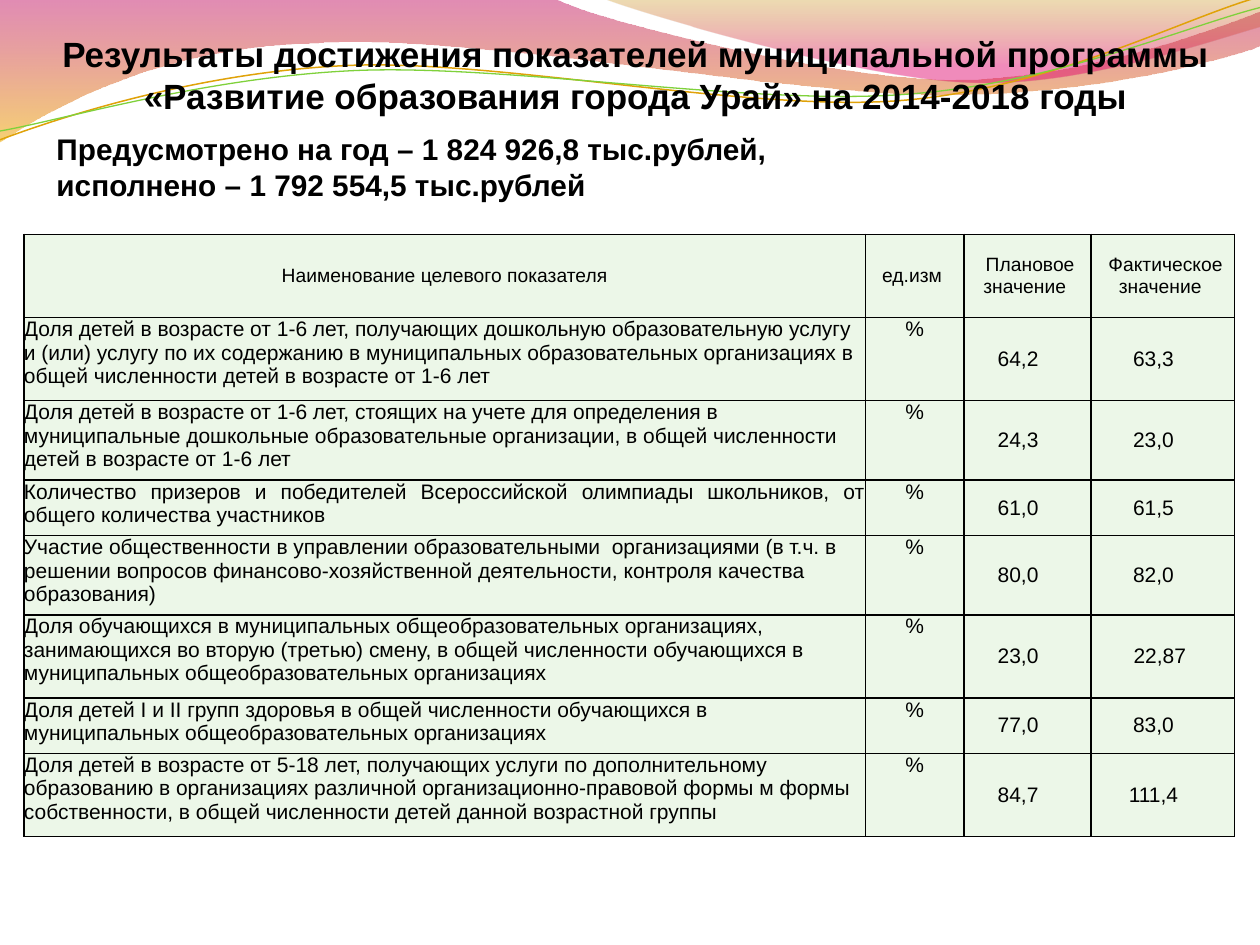
from lxml import etree
from pptx import Presentation
from pptx import util as u
from pptx.dml import color
from pptx.enum import text
from pptx.oxml import ns

FONT = "Arial"
BLACK = "000000"
PALE_GREEN = "ECF7E8"
LEFT, CENTER, JUSTIFY = text.PP_ALIGN.LEFT, text.PP_ALIGN.CENTER, text.PP_ALIGN.JUSTIFY
TOP, MIDDLE = text.MSO_ANCHOR.TOP, text.MSO_ANCHOR.MIDDLE

# Waves: a start point, then cubic segments (6 numbers) or straight ones (2)
LEFT_WAVE = [(0, 0), (4.4, -0.01),
             (4.76, 0.17, 6.64, 0.63, 7.58, 0.63),
             (8.53, 0.63, 9.58, 0.26, 10, 0.09), (10.01, 0.36),
             (9.83, 0.44, 8.7, 0.76, 7.46, 0.75),
             (6.22, 0.75, 3.82, 0.28, 2.57, 0.34),
             (1.29, 0.36, 0.46, 0.83, -0.01, 1.13)]
RIGHT_WAVE = [(4.79, -0.01),
              (5.09, 0.11, 6.82, 0.62, 7.69, 0.65),
              (8.56, 0.69, 9.61, 0.32, 10, 0.21), (10, 0)]
ORANGE_CURVE = [(0, 1.11),
                (0.48, 0.93, 1.58, 0.57, 2.77, 0.52),
                (3.95, 0.47, 5.93, 0.89, 7.13, 0.8),
                (8.33, 0.71, 9.38, 0.15, 9.98, -0.02)]
GREEN_CURVE = [(0, 1.04),
               (0.47, 0.96, 1.64, 0.61, 2.83, 0.56),
               (4.03, 0.51, 5.97, 0.84, 7.17, 0.75),
               (8.36, 0.67, 9.41, 0.21, 10, 0.06)]

TITLE = ["Результаты достижения показателей муниципальной программы",
         "«Развитие образования города Урай» на 2014-2018 годы"]
BUDGET = ["Предусмотрено на год – 1 824 926,8 тыс.рублей, "
          "исполнено – 1 792 554,5 тыс.рублей"]

COLUMN_WIDTHS = [6.68, 0.78, 1.01, 1.14]
ROW_HEIGHTS = [0.66, 0.66, 0.63, 0.44, 0.63, 0.66, 0.44, 0.66]
HEADERS = [" Наименование целевого показателя ", "ед.изм ",
           " Плановое значение ", " Фактическое значение "]
# Indicator, alignment, planned value, actual value
INDICATORS = [
    ("Доля детей в возрасте от 1-6 лет, получающих дошкольную образовательную "
     "услугу и (или) услугу по их содержанию в муниципальных образовательных "
     "организациях в общей численности детей в возрасте от 1-6 лет",
     LEFT, "64,2", "63,3"),
    ("Доля детей в возрасте от 1-6 лет, стоящих на учете для определения в "
     "муниципальные дошкольные образовательные организации, в общей "
     "численности детей в возрасте от 1-6 лет",
     LEFT, "24,3", "23,0"),
    ("Количество призеров и победителей Всероссийской олимпиады школьников, "
     "от общего количества участников",
     JUSTIFY, "61,0", "61,5"),
    ("Участие общественности в управлении образовательными  организациями "
     "(в т.ч. в решении вопросов финансово-хозяйственной деятельности, "
     "контроля качества образования)",
     LEFT, "80,0", "82,0"),
    ("Доля обучающихся в муниципальных общеобразовательных организациях, "
     "занимающихся во вторую (третью) смену, в общей численности обучающихся "
     "в муниципальных общеобразовательных организациях",
     LEFT, "23,0", "22,87"),
    ("Доля детей I и II групп здоровья в общей численности обучающихся в "
     "муниципальных общеобразовательных организациях",
     LEFT, "77,0", "83,0"),
    ("Доля детей в возрасте от 5-18 лет, получающих услуги по дополнительному "
     "образованию в организациях различной организационно-правовой формы м "
     "формы собственности, в общей численности детей данной возрастной группы",
     LEFT, "84,7", "111,4"),
]


def rgb(value):
    return color.RGBColor.from_string(value)


def add_outline(slide, segments, close):
    """Join the end points, then bend the six-number segments into cubics."""
    ends = [tuple(u.Inches(n) for n in segment[-2:]) for segment in segments]
    builder = slide.shapes.build_freeform(*ends[0], scale=1.0)
    builder.add_line_segments(ends[1:], close=close)
    outline = builder.convert_to_shape()
    outline.shadow.inherit = False
    straight_parts = list(outline.element.iter(ns.qn("a:lnTo")))
    for part, segment in zip(straight_parts, segments[1:]):
        if len(segment) == 2:
            continue
        cubic = etree.Element(ns.qn("a:cubicBezTo"))
        for x, y in zip(segment[::2], segment[1::2]):
            etree.SubElement(cubic, ns.qn("a:pt"),
                             x=str(u.Inches(x) - outline.left),
                             y=str(u.Inches(y) - outline.top))
        part.getparent().replace(part, cubic)
    return outline


def add_wave(slide, segments, stops):
    """Closed wave; each stop is position, colour, opacity in percent."""
    wave = add_outline(slide, segments, close=True)
    wave.line.fill.background()
    wave.fill.gradient()
    wave.fill.gradient_angle = 270
    for stop, (position, hue, _) in zip(wave.fill.gradient_stops, stops):
        stop.position = position
        stop.color.rgb = rgb(hue)
    for hue_xml, (_, _, opacity) in zip(wave.element.spPr.iter(ns.qn("a:srgbClr")), stops):
        etree.SubElement(hue_xml, ns.qn("a:alpha"), val=str(opacity * 1000))


def add_curve(slide, segments, hue, width):
    curve = add_outline(slide, segments, close=False)
    curve.fill.background()
    curve.line.color.rgb = rgb(hue)
    curve.line.width = u.Pt(width)


def write(frame, lines, size, align, bold=False):
    frame.word_wrap = True
    for index, line in enumerate(lines):
        paragraph = frame.add_paragraph() if index else frame.paragraphs[0]
        paragraph.alignment = align
        run = paragraph.add_run()
        run.text = line
        run.font.name, run.font.size, run.font.bold = FONT, u.Pt(size), bold
        run.font.color.rgb = rgb(BLACK)


def place_title(slide):
    title = slide.shapes.title
    title.left, title.top = u.Inches(0.28), u.Inches(0.21)
    title.width, title.height = u.Inches(9.53), u.Inches(0.77)
    write(title.text_frame, TITLE, 20, CENTER, bold=True)
    title.text_frame.auto_size = text.MSO_AUTO_SIZE.SHAPE_TO_FIT_TEXT
    # Bring the title in front of the waves
    title.element.getparent().append(title.element)


def add_budget(slide):
    budget = slide.shapes.add_textbox(u.Inches(0.35), u.Inches(0.99),
                                      u.Inches(6.3), u.Inches(0.67))
    write(budget.text_frame, BUDGET, 17, LEFT, bold=True)
    budget.text_frame.auto_size = text.MSO_AUTO_SIZE.SHAPE_TO_FIT_TEXT


def fill_cell(cell, words, size, align, anchor, right_margin=0.0):
    cell.margin_left = cell.margin_top = cell.margin_bottom = 0
    cell.margin_right = u.Inches(right_margin)
    cell.vertical_anchor = anchor
    write(cell.text_frame, [words], size, align)
    properties = cell._tc.get_or_add_tcPr()
    for side in ("lnL", "lnR", "lnT", "lnB"):
        border = etree.SubElement(properties, ns.qn("a:" + side), w=str(u.Pt(1)))
        solid = etree.SubElement(border, ns.qn("a:solidFill"))
        etree.SubElement(solid, ns.qn("a:srgbClr"), val=BLACK)
    cell.fill.solid()
    cell.fill.fore_color.rgb = rgb(PALE_GREEN)


def add_indicators(slide):
    table = slide.shapes.add_table(
        len(ROW_HEIGHTS), len(COLUMN_WIDTHS), u.Inches(0.19), u.Inches(1.86),
        u.Inches(sum(COLUMN_WIDTHS)), u.Inches(sum(ROW_HEIGHTS))).table
    for column, width in zip(table.columns, COLUMN_WIDTHS):
        column.width = u.Inches(width)
    for row, height in zip(table.rows, ROW_HEIGHTS):
        row.height = u.Inches(height)
    for column, header in enumerate(HEADERS):
        fill_cell(table.cell(0, column), header, 11, CENTER, MIDDLE)
    for row, (indicator, align, planned, actual) in enumerate(INDICATORS, 1):
        fill_cell(table.cell(row, 0), indicator, 12, align, TOP)
        fill_cell(table.cell(row, 1), "%", 12, CENTER, TOP)
        for column, value in ((2, planned), (3, actual)):
            margin = 0.05 if value == "22,87" else 0.15
            fill_cell(table.cell(row, column), value, 12, CENTER, MIDDLE, margin)


def main():
    deck = Presentation()
    deck.slide_width, deck.slide_height = u.Inches(10), u.Inches(7.5)
    slide = deck.slides.add_slide(deck.slide_layouts[5])
    # Decorative header
    add_wave(slide, LEFT_WAVE, [(0, "BD0059", 45), (1, "F0AB00", 55)])
    add_wave(slide, RIGHT_WAVE, [(0, "C38B00", 30), (0.8, "E1006B", 45)])
    add_curve(slide, ORANGE_CURVE, "E0A209", 0.85)
    add_curve(slide, GREEN_CURVE, "7FD13B", 0.75)
    # Content
    place_title(slide)
    add_indicators(slide)
    add_budget(slide)
    deck.save("out.pptx")


if __name__ == "__main__":
    main()
